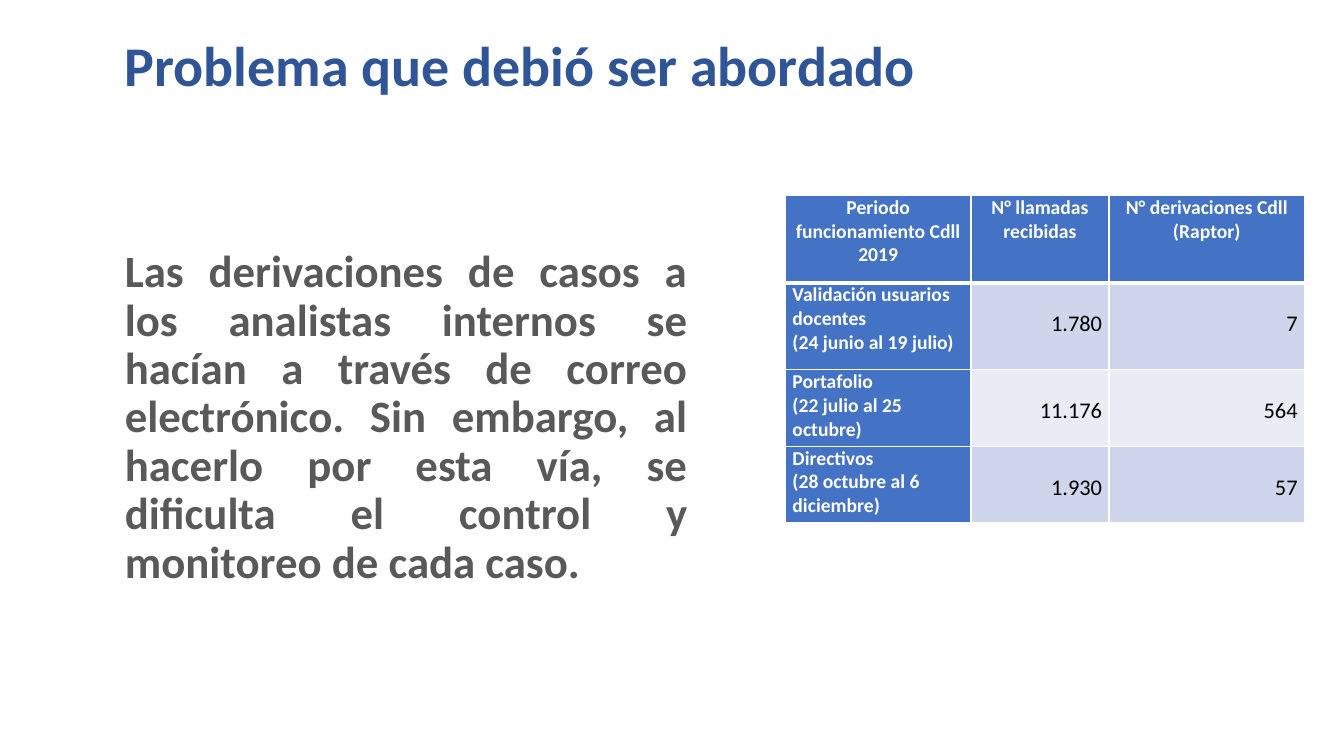
import pptx
import pptx.dml.color
import pptx.enum.text
import pptx.oxml
import pptx.oxml.ns
import pptx.util

Inches = pptx.util.Inches
Align = pptx.enum.text.PP_ALIGN
Anchor = pptx.enum.text.MSO_ANCHOR

TITLE = "Problema que debió ser abordado"
PROBLEM = (
    "Las derivaciones de casos a los analistas internos se hacían a través de correo "
    "electrónico. Sin embargo, al hacerlo por esta vía, se dificulta el control y "
    "monitoreo de cada caso."
)
CALLS = [
    ["Periodo funcionamiento Cdll 2019", "N° llamadas recibidas", "N° derivaciones Cdll (Raptor)"],
    ["Validación usuarios docentes\n(24 junio al 19 julio)", "1.780", "7"],
    ["Portafolio\n(22 julio al 25 octubre)", "11.176", "564"],
    ["Directivos\n(28 octubre al 6 diciembre)", "1.930", "57"],
]
COLUMN_WIDTHS = [1.84, 1.37, 1.94]
ROW_HEIGHTS = [0.87, 0.86, 0.76, 0.76]
BAND_FILLS = ["E9EBF5", "CFD5EA"]


def color(value):
    """Return the colour for a hex string."""
    return pptx.dml.color.RGBColor.from_string(value)


def apply(target, values):
    """Set each attribute named in values on the target."""
    for name, value in values.items():
        setattr(target, name, value)


def write(frame, text, size, ink, bold, **paragraph_format):
    """Fill a text frame with one paragraph for each line of text."""
    frame.word_wrap = True
    frame.text = text
    for paragraph in frame.paragraphs:
        apply(paragraph, paragraph_format)
        for run in paragraph.runs:
            apply(run.font, {"name": "Calibri", "size": pptx.util.Pt(size), "bold": bold})
            run.font.color.rgb = color(ink)


def add_title(slide, left, top, width, height):
    """Place the slide title, centred vertically in its box."""
    frame = slide.shapes.add_textbox(*map(Inches, (left, top, width, height))).text_frame
    frame.vertical_anchor = Anchor.MIDDLE
    write(frame, TITLE, 40, "2F5597", True, line_spacing=0.9)


def add_problem(slide, left, top, width, height):
    """Place the justified description of the problem."""
    frame = slide.shapes.add_textbox(*map(Inches, (left, top, width, height))).text_frame
    frame.margin_top = Inches(0.83)
    write(frame, PROBLEM, 32, "595959", True, line_spacing=0.9, alignment=Align.JUSTIFY)


def add_borders(cell, bottom_width):
    """Draw white borders around a cell ahead of its fill."""
    properties = cell._tc.get_or_add_tcPr()
    widths = {"lnL": 1, "lnR": 1, "lnT": 1, "lnB": bottom_width}
    for position, (side, width) in enumerate(widths.items()):
        border = pptx.oxml.parse_xml(
            f'<a:{side} {pptx.oxml.ns.nsdecls("a")} w="{pptx.util.Pt(width)}">'
            f'<a:solidFill><a:srgbClr val="FFFFFF"/></a:solidFill></a:{side}>'
        )
        properties.insert(position, border)


def add_calls_table(slide, left, top, width, height):
    """Place the table of calls and referrals by period."""
    box = map(Inches, (left, top, width, height))
    table = slide.shapes.add_table(len(CALLS), len(CALLS[0]), *box).table
    for column, column_width in zip(table.columns, COLUMN_WIDTHS):
        column.width = Inches(column_width)
    for row, row_height in zip(table.rows, ROW_HEIGHTS):
        row.height = Inches(row_height)
    for row_index, values in enumerate(CALLS):
        for column_index, value in enumerate(values):
            cell = table.cell(row_index, column_index)
            apply(cell, {"margin_left": Inches(0.07), "margin_right": Inches(0.07),
                         "margin_top": 0, "margin_bottom": 0})
            is_label = row_index == 0 or column_index == 0
            cell.fill.solid()
            cell.fill.fore_color.rgb = color("4472C4" if is_label else BAND_FILLS[row_index % 2])
            add_borders(cell, 3 if row_index == 0 else 1)
            if is_label:
                alignment = Align.CENTER if row_index == 0 else Align.LEFT
                write(cell.text_frame, value, 14, "FFFFFF", True, alignment=alignment)
            else:
                write(cell.text_frame, value, 16, "000000", False,
                      alignment=Align.RIGHT, line_spacing=2.0)


def main():
    """Build the slide and save it."""
    presentation = pptx.Presentation()
    apply(presentation, {"slide_width": Inches(13.33), "slide_height": Inches(7.5)})
    slide = presentation.slides.add_slide(presentation.slide_layouts[6])
    add_problem(slide, 1.14, 1.64, 5.78, 5.36)
    add_calls_table(slide, 7.79, 1.94, sum(COLUMN_WIDTHS), sum(ROW_HEIGHTS))
    add_title(slide, 1.14, 0, 11.93, 1.35)
    presentation.save("out.pptx")


if __name__ == "__main__":
    main()
